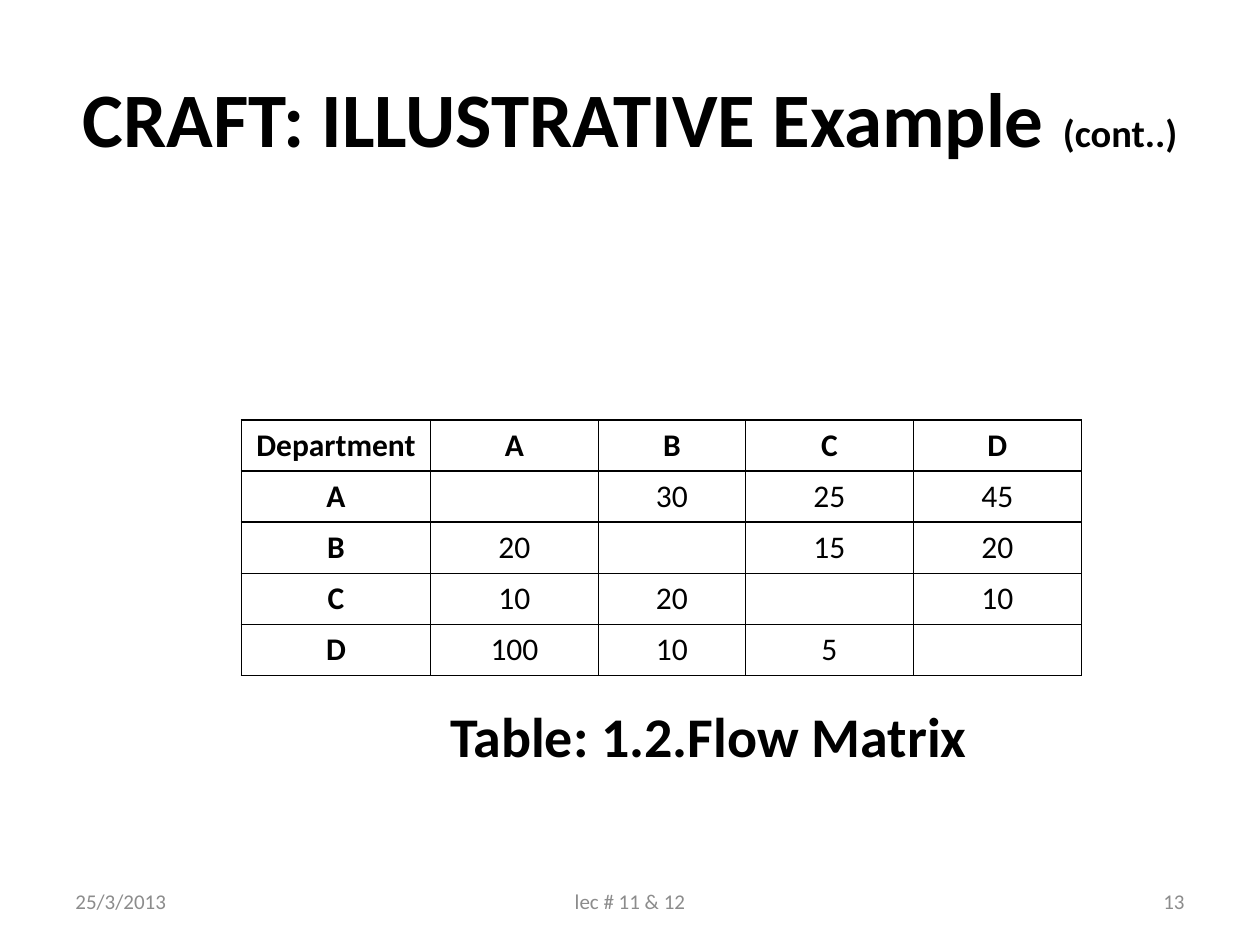
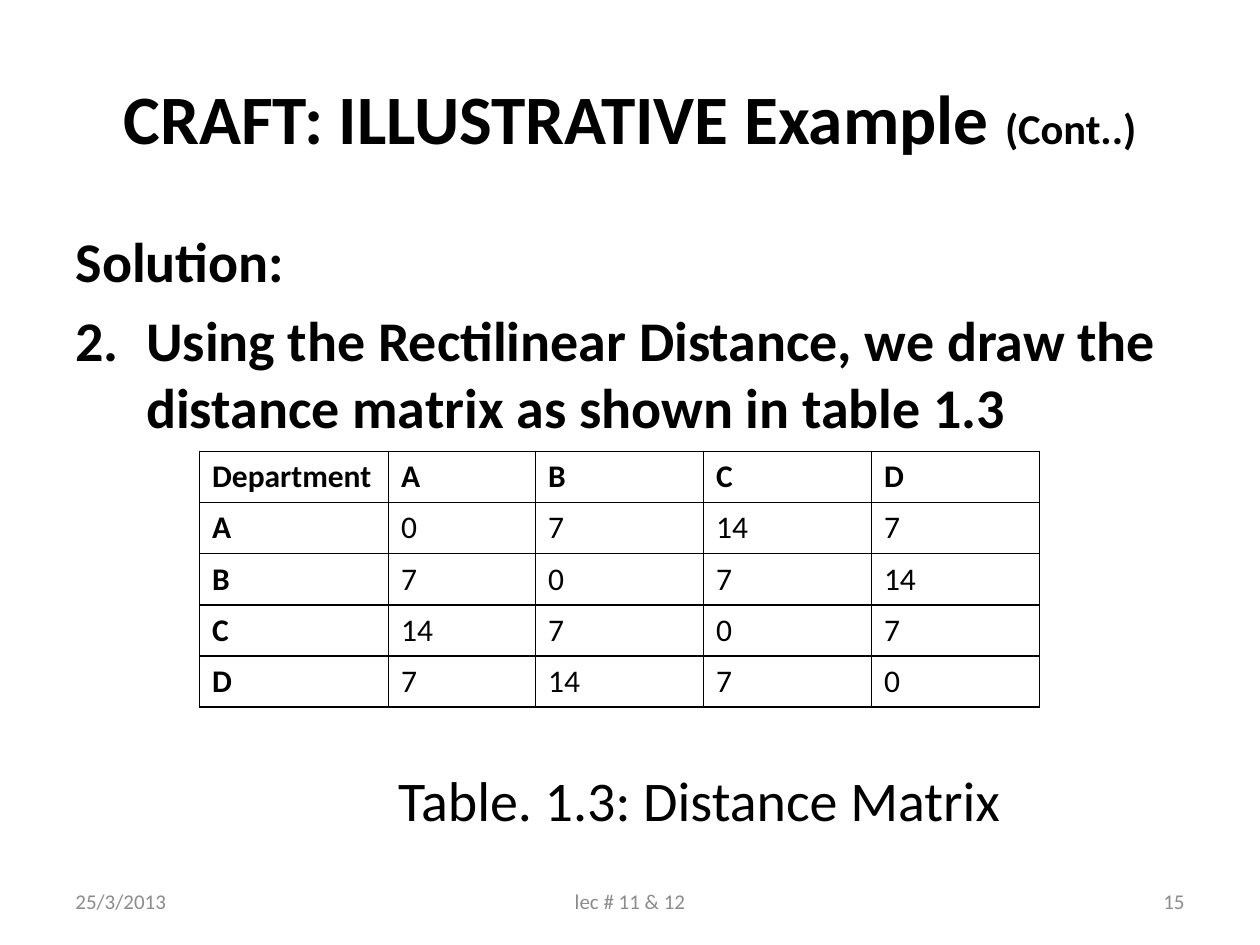
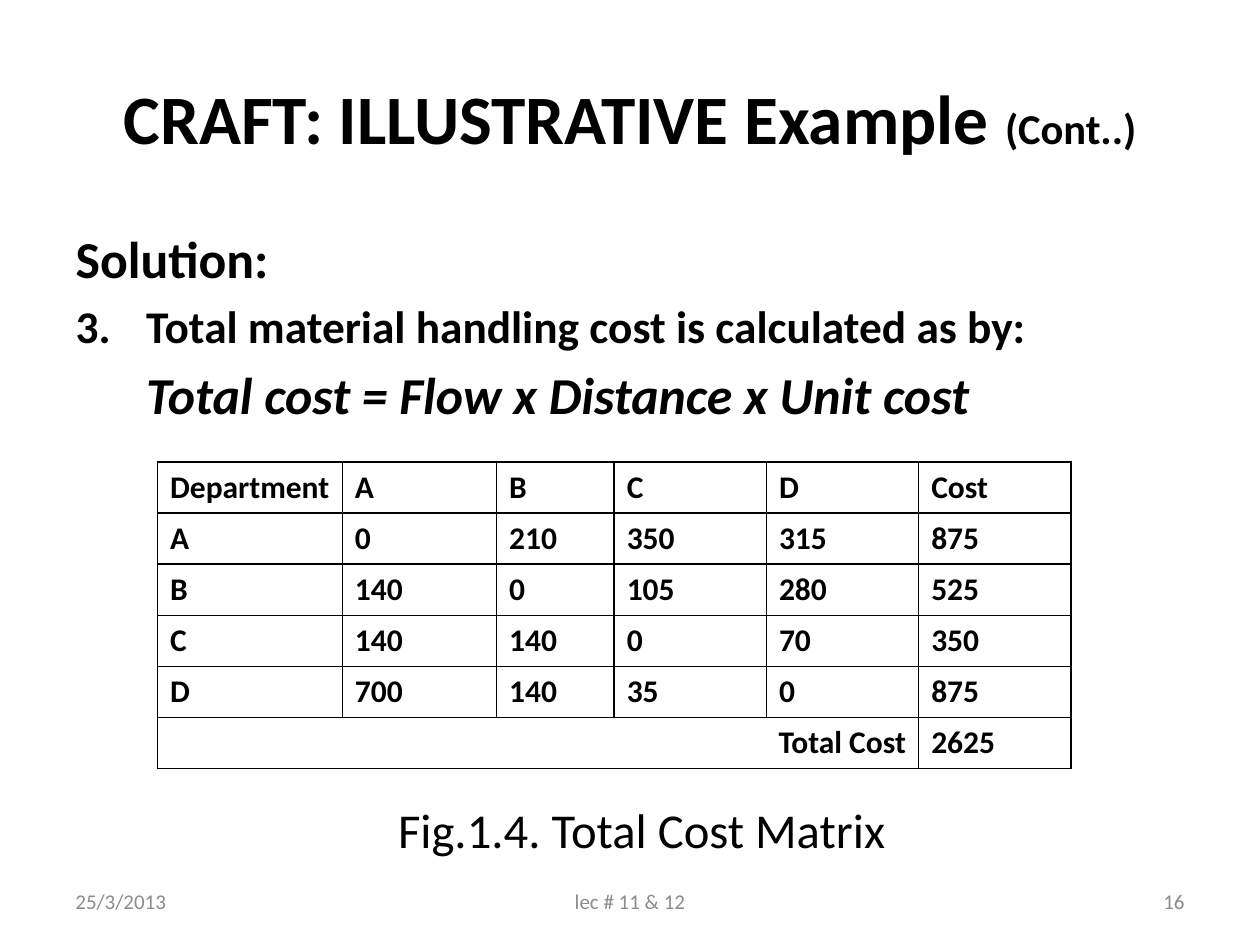
import pptx
import pptx.util
import pptx.dml.color
import pptx.enum.text
import pptx.oxml
import pptx.oxml.ns
import lxml.etree

COLS, ROWS = 120, 90
INK = {"text": "000000", "line": "000000", "foot": "8C8C8C", "cell": "FFFFFF"}
FONT = "Calibri"
ALIGN = pptx.enum.text.PP_ALIGN
ANCHOR = pptx.enum.text.MSO_ANCHOR
FRAME = {"word_wrap": True, "auto_size": pptx.enum.text.MSO_AUTO_SIZE.NONE}
HEAD = (6, 3.6, 108, 15)
BODY = (6, 21, 108, 59.4)
WIDE = (6, 21, 110, 59.4)
FOOT = (6, 83.4, 108, 4.8)
LINE = 4.87

deck = pptx.Presentation()
deck.slide_width = pptx.util.Inches(10)
deck.slide_height = pptx.util.Inches(7.5)


def put(item, vals):
    for name, val in vals.items():
        setattr(item, name, val)


def spot(box):
    x, y, w, h = box
    unit, step = deck.slide_width / COLS, deck.slide_height / ROWS
    return [round(v) for v in (x * unit, y * step, w * unit, h * step)]


def place(shape, box):
    put(shape, dict(zip(("left", "top", "width", "height"), spot(box))))


def write(para, text, size, ink="text", **style):
    run = para.add_run()
    run.text = text
    put(run.font, {"name": FONT, "size": pptx.util.Pt(size), **style})
    run.font.color.rgb = pptx.dml.color.RGBColor.from_string(INK[ink])


def child(node, tag, **attrs):
    return lxml.etree.SubElement(node, pptx.oxml.ns.qn("a:" + tag), attrs)


def title(slide, box, size, note, small):
    shape = slide.shapes.title
    place(shape, box)
    put(shape.text_frame, {**FRAME, "vertical_anchor": ANCHOR.MIDDLE})
    para = shape.text_frame.paragraphs[0]
    para.alignment = ALIGN.CENTER
    write(para, "CRAFT: ILLUSTRATIVE Example ", size, bold=True)
    write(para, note, small, bold=True)


def body(slide, box, lines, **frame):
    shape = slide.placeholders[1]
    place(shape, box)
    text = shape.text_frame
    put(text, {**FRAME, **frame})
    for i, line in enumerate(lines):
        para = text.paragraphs[0] if i == 0 else text.add_paragraph()
        size, start = line["size"], line.get("start")
        gap = line.get("gap", size * 0.2)
        put(para, {"alignment": line.get("align", ALIGN.LEFT),
                   "space_before": pptx.util.Pt(gap)})
        write(para, line["text"], size, **line.get("style", {"bold": True}))
        props = para._p.get_or_add_pPr()
        left = pptx.util.Inches(line.get("left", 0))
        props.set("marL", str(left))
        props.set("indent", str(-left if start else 0))
        if start:
            child(props, "buFont", typeface="+mj-lt")
            child(props, "buAutoNum", type="arabicPeriod", startAt=str(start))
        else:
            child(props, "buNone")


def footer(slide, box, page):
    x, y, w, h = box
    parts = [("25/3/2013", 0, 28, ALIGN.LEFT),
             ("lec # 11 & 12", 35, 38, ALIGN.CENTER),
             (page, w - 28, 28, ALIGN.RIGHT)]
    for words, shift, width, align in parts:
        shape = slide.shapes.add_textbox(*spot((x + shift, y, width, h)))
        put(shape.text_frame, {**FRAME, "vertical_anchor": ANCHOR.MIDDLE})
        para = shape.text_frame.paragraphs[0]
        para.alignment = align
        write(para, words, 12, "foot")


def border(cell):
    props = cell._tc.get_or_add_tcPr()
    for i, side in enumerate(("lnL", "lnR", "lnT", "lnB")):
        edge = props.makeelement(pptx.oxml.ns.qn("a:" + side), {"w": "12700"})
        props.insert(i, edge)
        child(child(edge, "solidFill"), "srgbClr", val=INK["line"])


def matrix(slide, x, y, widths, rows, align=ALIGN.LEFT, strong=False):
    box = (x, y, sum(widths), LINE * len(rows))
    grid = slide.shapes.add_table(len(rows), len(widths), *spot(box)).table
    put(grid, {"first_row": False, "horz_banding": False})
    for col, width in zip(grid.columns, widths):
        col.width = round(deck.slide_width * width / COLS)
    for i, row in enumerate(rows):
        for j, words in enumerate(row):
            cell = grid.cell(i, j)
            cell.fill.solid()
            cell.fill.fore_color.rgb = pptx.dml.color.RGBColor.from_string(INK["cell"])
            border(cell)
            para = cell.text_frame.paragraphs[0]
            para.alignment = align
            if words:
                write(para, words, 18, bold=strong or i == 0 or j == 0)
    return grid


def begin(page, size=39.6, note="(Cont..)", small=24.3):
    slide = deck.slides.add_slide(deck.slide_layouts[1])
    title(slide, HEAD, size, note, small)
    footer(slide, FOOT, page)
    return slide


def flow():
    slide = begin("13", 44, "(cont..)", 22)
    body(slide, BODY,
         [{"text": "Table: 1.2.Flow Matrix", "size": 32, "align": ALIGN.CENTER}],
         vertical_anchor=ANCHOR.BOTTOM,
         margin_left=pptx.util.Inches(1.35),
         margin_bottom=pptx.util.Inches(0.6))
    matrix(slide, 23, 40, (18, 16, 14, 16, 16), [
        ("Department", "A", "B", "C", "D"),
        ("A", "", "30", "25", "45"),
        ("B", "20", "", "15", "20"),
        ("C", "10", "20", "", "10"),
        ("D", "100", "10", "5", "")], ALIGN.CENTER)


def range_():
    slide = begin("15")
    body(slide, BODY, [
        {"text": "Solution:", "size": 32},
        {"text": "Using the Rectilinear Distance, we draw the distance matrix "
                 "as shown in table 1.3", "size": 32, "left": 0.56, "start": 2},
        {"text": "Table. 1.3: Distance Matrix", "size": 32, "left": 2.56,
         "gap": 186, "style": {"bold": False}}])
    matrix(slide, 19, 43, (18, 14, 16, 16, 16), [
        ("Department", "A", "B", "C", "D"),
        ("A", "0", "7", "14", "7"),
        ("B", "7", "0", "7", "14"),
        ("C", "14", "7", "0", "7"),
        ("D", "7", "14", "7", "0")])


def cost():
    slide = begin("16")
    body(slide, WIDE, [
        {"text": "Solution:", "size": 29.6},
        {"text": "Total material handling cost is calculated as by:",
         "size": 25.9, "left": 0.56, "start": 3},
        {"text": "Total cost = Flow x Distance x Unit cost", "size": 29.6,
         "left": 0.56, "style": {"bold": True, "italic": True}},
        {"text": "Fig.1.4. Total Cost Matrix", "size": 27.8, "left": 2.56,
         "gap": 214, "style": {"bold": False}}])
    grid = matrix(slide, 15, 44, (17.6, 14.7, 11.2, 14.5, 14.5, 14.5), [
        ("Department", "A", "B", "C", "D", "Cost"),
        ("A", "0", "210", "350", "315", "875"),
        ("B", "140", "0", "105", "280", "525"),
        ("C", "140", "140", "0", "70", "350"),
        ("D", "700", "140", "35", "0", "875"),
        ("Total Cost", "", "", "", "", "2625")], strong=True)
    total = grid.cell(5, 0)
    total.merge(grid.cell(5, 4))
    total.text_frame.paragraphs[0].alignment = ALIGN.RIGHT


def main():
    for make in (flow, range_, cost):
        make()
    deck.save("out.pptx")


if __name__ == "__main__":
    main()
